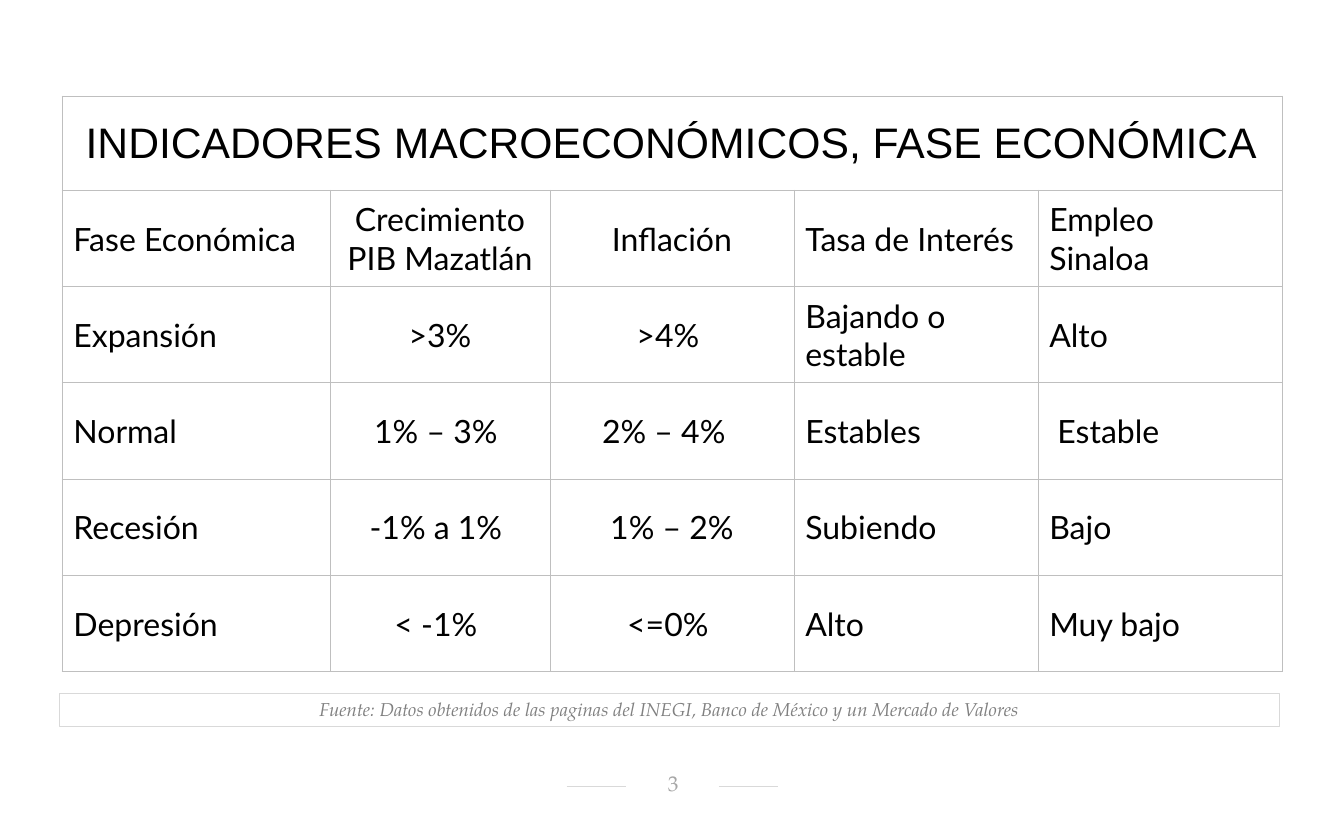
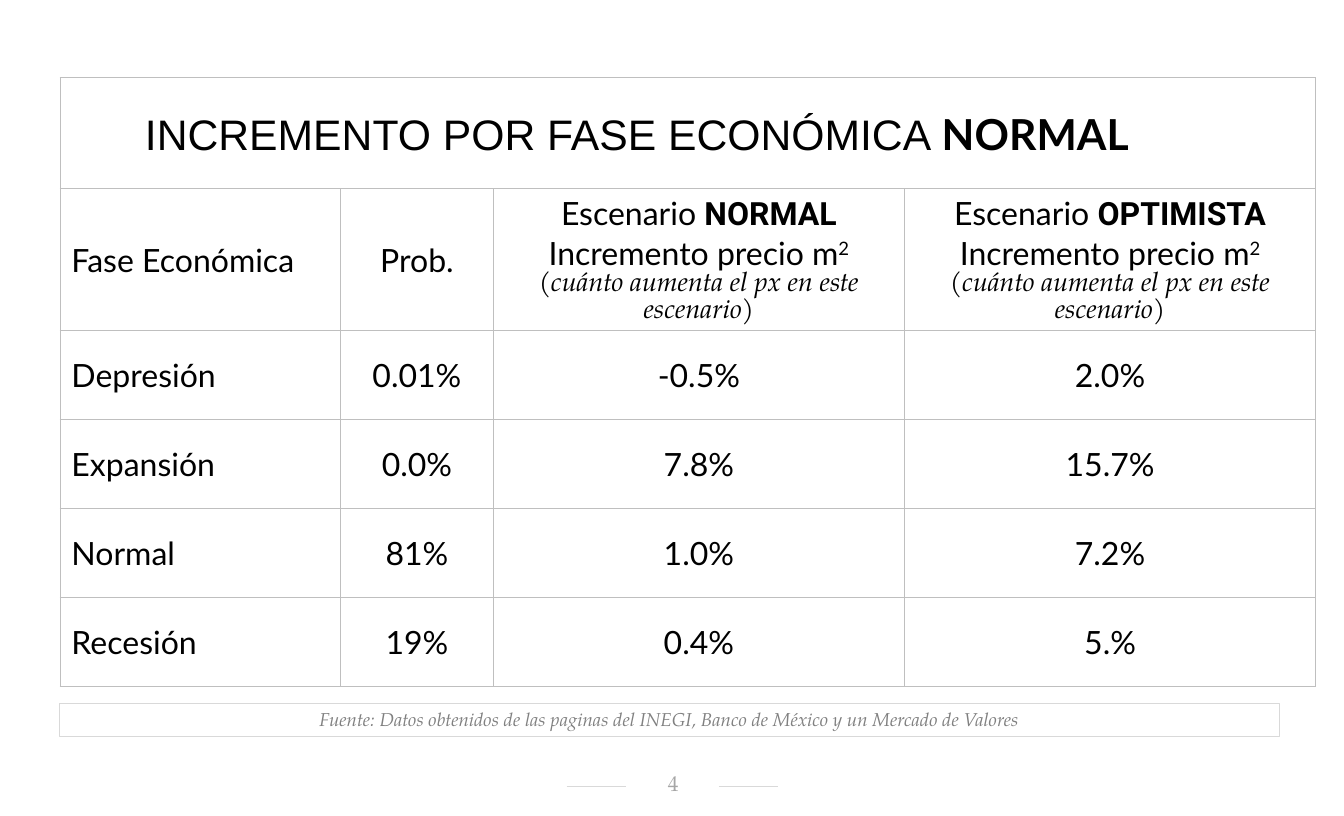
from lxml import etree
from pptx import Presentation
from pptx.dml.color import RGBColor
from pptx.enum.shapes import MSO_CONNECTOR, MSO_SHAPE
from pptx.enum.text import MSO_ANCHOR, MSO_AUTO_SIZE, PP_ALIGN
from pptx.oxml.ns import qn
from pptx.util import Pt

RECT = MSO_SHAPE.RECTANGLE
LINE = MSO_CONNECTOR.STRAIGHT
MID, TOP = MSO_ANCHOR.MIDDLE, MSO_ANCHOR.TOP
GROW = MSO_AUTO_SIZE.SHAPE_TO_FIT_TEXT
ALIGN = {"l": PP_ALIGN.LEFT, "c": PP_ALIGN.CENTER}

INK, GRID, RULE = "000000", "BFBFBF", "D9D9D9"
SANS, SERIF = "Lato", "TeX Gyre Pagella"
SOURCE = ("Fuente: Datos obtenidos de las paginas del INEGI, "
          "Banco de México y un Mercado de Valores")

BODY = {"size": 24, "face": SANS}
HEAD = {"size": 32, "face": "Arial"}
STRONG = {"size": 32, "face": SANS, "bold": True}
CASE = {"size": 24, "face": "Roboto", "bold": True}
RAISED = {"size": 24, "face": SANS, "base": 30}
ASIDE = {"size": 20, "face": SERIF, "italic": True}
NOTE = {"size": 14, "face": SERIF, "color": "808080", "italic": True}
PAGE = {"size": 16, "face": SERIF, "color": "A6A6A6"}


def hue(code):
    """Turn a hex string into a colour."""
    return RGBColor.from_string(code)


def add_run(para, text, size, face, color=INK, bold=False, italic=False, base=0):
    """Add one styled run to a paragraph."""
    run = para.add_run()
    run.text = text
    font = run.font
    font.size, font.name = Pt(size), face
    font.bold, font.italic = bold, italic
    font.color.rgb = hue(color)
    if base:
        run._r.get_or_add_rPr().set("baseline", str(base * 1000))


def write(frame, paras, align="c"):
    """Fill a text frame with paragraphs, each a list of (text, style) runs."""
    frame.word_wrap = True
    for i, runs in enumerate(paras):
        para = frame.add_paragraph() if i else frame.paragraphs[0]
        para.alignment = ALIGN[align]
        for text, style in runs:
            add_run(para, text, **style)


def inset(part, sides):
    """Set left, top, right and bottom margins of a cell or frame."""
    (part.margin_left, part.margin_top,
     part.margin_right, part.margin_bottom) = map(Pt, sides)


def edge(cell):
    """Draw thin grid lines on all four sides of a cell."""
    props = cell._tc.get_or_add_tcPr()
    for side in ("lnL", "lnR", "lnT", "lnB"):
        line = etree.SubElement(props, qn("a:" + side), w=str(Pt(0.5)))
        fill = etree.SubElement(line, qn("a:solidFill"))
        etree.SubElement(fill, qn("a:srgbClr"), val=GRID)


def add_grid(slide, left, top, cols, rows, aligns, title, pad, cells):
    """Place a table with a merged title row over its cells."""
    box = slide.shapes.add_table(len(rows), len(cols), Pt(left), Pt(top),
                                 Pt(sum(cols)), Pt(sum(rows)))
    table = box.table
    table.first_row = table.horz_banding = False
    for col, width in zip(table.columns, cols):
        col.width = Pt(width)
    for row, height in zip(table.rows, rows):
        row.height = Pt(height)
    for cell in table.iter_cells():
        edge(cell)
        cell.fill.background()
        cell.vertical_anchor = MID
        inset(cell, (8.6, 0.7, 8.6, 0))
    first = table.cell(0, 0)
    first.merge(table.cell(0, len(cols) - 1))
    inset(first, pad)
    write(first.text_frame, [title])
    for r, texts in enumerate(cells, 1):
        for c, text in enumerate(texts):
            paras = [[(text, BODY)]] if isinstance(text, str) else text
            write(table.cell(r, c).text_frame, paras, aligns[c])


def add_source(slide, left, top, width, height):
    """Place the framed source note."""
    box = slide.shapes.add_shape(RECT, Pt(left), Pt(top), Pt(width), Pt(height))
    box.shadow.inherit = False
    box.fill.background()
    box.line.color.rgb = hue(RULE)
    box.line.width = Pt(0.75)
    frame = box.text_frame
    frame.vertical_anchor = TOP
    write(frame, [[(SOURCE, NOTE)]])
    frame.auto_size = GROW


def add_page(slide, left, top, width, height, num):
    """Place the page number between two short rules."""
    dash, y = 44.3, top + 10.8
    for x in (left, left + width - dash):
        line = slide.shapes.add_connector(LINE, Pt(x), Pt(y), Pt(x + dash), Pt(y))
        line.line.color.rgb = hue(RULE)
        line.line.width = Pt(0.5)
        etree.SubElement(line._element.spPr, qn("a:effectLst"))
    box = slide.shapes.add_textbox(Pt(left + dash), Pt(top),
                                   Pt(width - 2 * dash), Pt(height))
    frame = box.text_frame
    frame.vertical_anchor = MID
    inset(frame, (8.6, 1.4, 7.2, 3.6))
    write(frame, [[(str(num), PAGE)]])


def add_slide(deck, num, note_top):
    """Add a blank slide with its source note and page number."""
    slide = deck.slides.add_slide(deck.slide_layouts[6])
    add_source(slide, 44.6, note_top, 915, 25)
    add_page(slide, 425, 578.9, 158.5, 18.7, num)
    return slide


def phases(deck):
    """Build the slide of indicators by economic phase."""
    slide = add_slide(deck, 3, 520)
    cells = [
        ["Fase Económica", "Crecimiento PIB Mazatlán", "Inflación",
         "Tasa de Interés", [[("Empleo", BODY)], [("Sinaloa", BODY)]]],
        ["Expansión", ">3%", ">4% ", "Bajando o estable", "Alto"],
        ["Normal", "1% – 3% ", "2% – 4%  ", "Estables", " Estable"],
        ["Recesión", "-1% a 1% ", "1% – 2%", "Subiendo", "Bajo"],
        ["Depresión", " < -1%  ", "<=0% ", "Alto", "Muy bajo"],
    ]
    title = [("INDICADORES MACROECONÓMICOS, FASE ECONÓMICA", HEAD)]
    add_grid(slide, 46.5, 72.2, [201, 165] + [183] * 3, [70.5] + [72.2] * 5,
             "lccll", title, (8.6, 2.2, 8.6, 2.2), cells)


def case(name):
    """Give the heading paragraphs of one scenario."""
    return [[("Escenario ", BODY), (name, CASE)],
            [("Incremento precio m", BODY), ("2", RAISED)],
            [("(cuánto aumenta el px en este escenario)", ASIDE)]]


def growth(deck):
    """Build the slide of price growth by phase and scenario."""
    slide = add_slide(deck, 4, 527.6)
    cells = [
        ["Fase Económica", "Prob.", case("NORMAL"), case("OPTIMISTA")],
        ["Depresión", "0.01%", "-0.5%", "2.0%"],
        ["Expansión", "0.0%", "7.8%", "15.7%"],
        ["Normal", "81%", "1.0%", "7.2%"],
        ["Recesión", "19%", "0.4%", "5.%"],
    ]
    title = [("INCREMENTO POR FASE ECONÓMICA ", HEAD), ("NORMAL", STRONG)]
    add_grid(slide, 45, 58.2, [210.4, 114.6, 308.4, 308.4],
             [83.2, 106.5] + [66.8] * 4, "lccc", title, (8.6, 0.7, 85, 0), cells)


def main():
    """Build and save the deck."""
    deck = Presentation()
    deck.slide_width, deck.slide_height = Pt(1008), Pt(612)
    phases(deck)
    growth(deck)
    deck.save("out.pptx")


if __name__ == "__main__":
    main()
